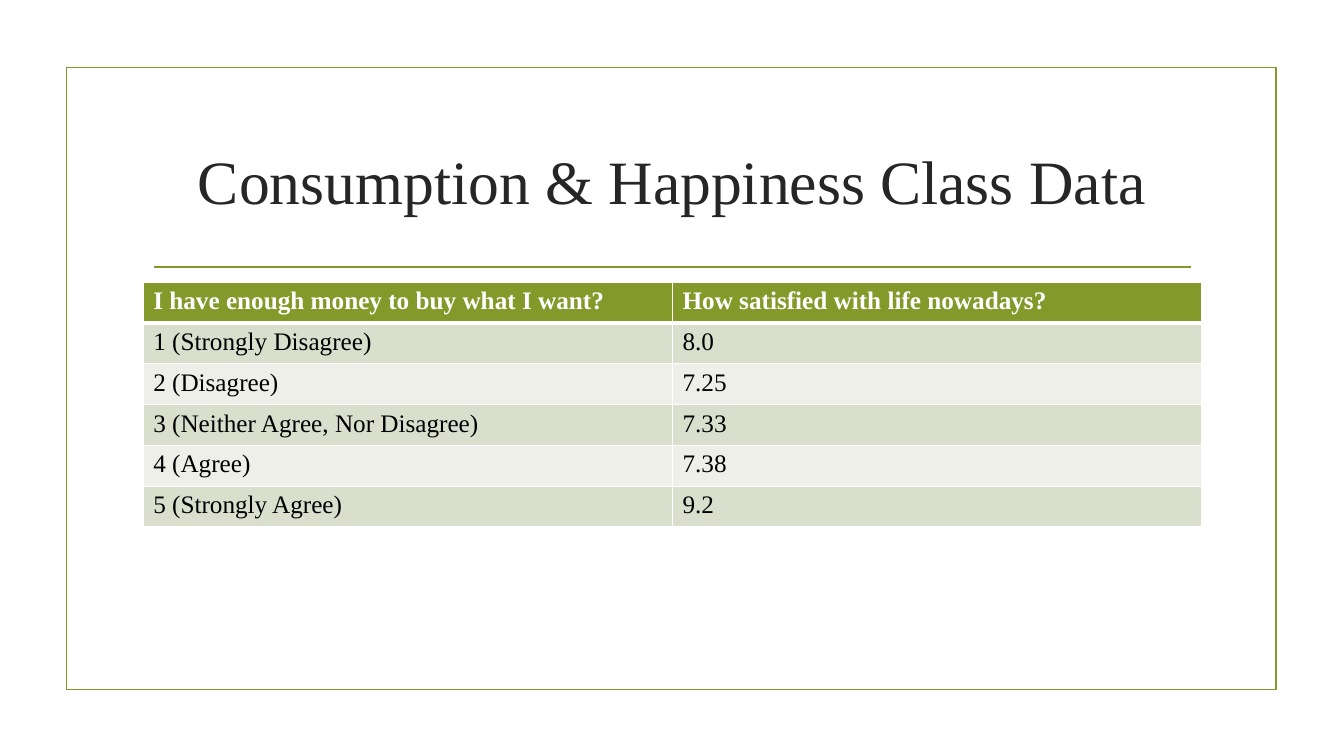
from lxml.etree import SubElement
from pptx import Presentation
from pptx.dml.color import RGBColor
from pptx.enum.shapes import MSO_CONNECTOR, MSO_SHAPE
from pptx.enum.text import MSO_ANCHOR, PP_ALIGN
from pptx.oxml.ns import qn
from pptx.util import Inches, Pt

GREEN = RGBColor(0x83, 0x99, 0x2A)
DARK = RGBColor(0x26, 0x26, 0x26)
BLACK = RGBColor(0, 0, 0)
WHITE = RGBColor(0xFF, 0xFF, 0xFF)
BANDS = [RGBColor(0xD9, 0xDE, 0xCD), RGBColor(0xED, 0xEF, 0xE8)]
FONT = "Times New Roman"

ROWS = [
    ("I have enough money to buy what I want?", "How satisfied with life nowadays?"),
    ("1 (Strongly Disagree)", "8.0"),
    ("2 (Disagree)", "7.25"),
    ("3 (Neither Agree, Nor Disagree)", "7.33"),
    ("4 (Agree)", "7.38"),
    ("5 (Strongly Agree)", "9.2"),
]


def box(left, top, width, height):
    return [Inches(n) for n in (left, top, width, height)]


def set_font(para, size, color, bold=False):
    font = para.font
    font.name, font.size, font.bold = FONT, Pt(size), bold
    font.color.rgb = color


def set_line(line):
    line.color.rgb = GREEN
    line.width = Pt(1.25)


def add_frame(slide):
    frame = slide.shapes.add_shape(MSO_SHAPE.RECTANGLE, *box(0.66, 0.67, 12, 6.17))
    frame.shadow.inherit = False
    frame.fill.background()
    set_line(frame.line)


def add_rule(slide):
    rule = slide.shapes.add_connector(
        MSO_CONNECTOR.STRAIGHT, *box(1.53, 2.65, 11.81, 2.65))
    set_line(rule.line)
    SubElement(rule._element.spPr, qn("a:effectLst"))


def set_title(slide, text):
    title = slide.shapes.title
    title.left, title.top, title.width, title.height = box(1.42, 1.07, 10.5, 1.43)
    frame = title.text_frame
    frame.text = text
    frame.word_wrap = True
    frame.vertical_anchor = MSO_ANCHOR.MIDDLE
    para = frame.paragraphs[0]
    para.alignment = PP_ALIGN.CENTER
    set_font(para, 44, DARK)


def add_edge(cell, side, width):
    props = cell._tc.get_or_add_tcPr()
    edge = SubElement(props, qn(f"a:ln{side}"), w=str(Pt(width)))
    fill = SubElement(edge, qn("a:solidFill"))
    SubElement(fill, qn("a:srgbClr"), val=str(WHITE))


def add_grid(slide, rows):
    place = box(1.42, 2.8, 10.5, 0.405 * len(rows))
    table = slide.shapes.add_table(len(rows), len(rows[0]), *place).table
    for r, row in enumerate(rows):
        head = r == 0
        for c, text in enumerate(row):
            cell = table.cell(r, c)
            # Thick white edge between header and body
            for side in "LRTB":
                thick = (head and side == "B") or (r == 1 and side == "T")
                add_edge(cell, side, 3 if thick else 1)
            cell.fill.solid()
            cell.fill.fore_color.rgb = GREEN if head else BANDS[(r - 1) % 2]
            cell.text = text
            set_font(cell.text_frame.paragraphs[0], 18, WHITE if head else BLACK, head)


def main():
    deck = Presentation()
    deck.slide_width, deck.slide_height = Inches(13.33), Inches(7.5)
    slide = deck.slides.add_slide(deck.slide_layouts[5])

    # Border and heading
    add_frame(slide)
    add_rule(slide)
    set_title(slide, "Consumption & Happiness Class Data")

    # Survey results
    add_grid(slide, ROWS)
    deck.save("out.pptx")


if __name__ == "__main__":
    main()
